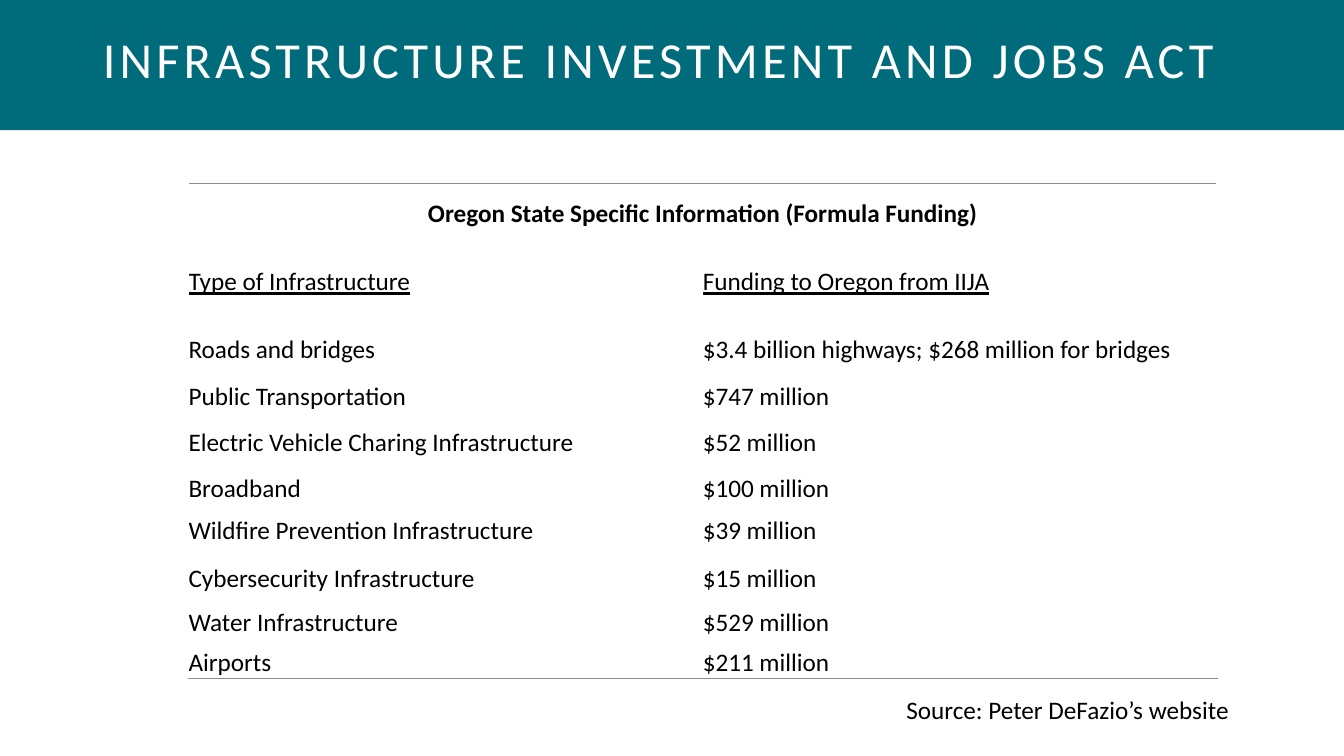
from lxml import etree
from pptx import Presentation
from pptx.dml.color import RGBColor
from pptx.enum.shapes import MSO_SHAPE
from pptx.enum.text import MSO_ANCHOR, MSO_AUTO_SIZE, PP_ALIGN
from pptx.oxml.ns import qn
from pptx.util import Inches, Pt

RECT = MSO_SHAPE.RECTANGLE
MIDDLE, FIXED = MSO_ANCHOR.MIDDLE, MSO_AUTO_SIZE.NONE
LEFT, CENTER = PP_ALIGN.LEFT, PP_ALIGN.CENTER
WIDE, HIGH = Inches(13.33), Inches(7.5)
TEAL, WHITE, BLACK, GRAY = "006C7B", "FFFFFF", "000000", "8C8C8C"
FONT = "Calibri"

HEADING = "Oregon State Specific Information (Formula Funding)"
ROWS = [
    (0.61, HEADING, ""),
    (0.74, "Type of Infrastructure", "Funding to Oregon from IIJA"),
    (0.61, "Roads and bridges",
     "$3.4 billion highways; $268 million for bridges"),
    (0.31, "Public Transportation", "$747 million"),
    (0.61, "Electric Vehicle Charing Infrastructure", "$52 million"),
    (0.31, "Broadband", "$100 million"),
    (0.52, "Wildfire Prevention Infrastructure", "$39 million"),
    (0.42, "Cybersecurity Infrastructure", "$15 million"),
    (0.47, "Water Infrastructure", "$529 million"),
    (0.31, "Airports", "$211 million"),
]


def color(code):
    return RGBColor.from_string(code)


def area(x, y, w, h):
    """Turn percentages of the slide's size into left, top, width, height."""
    return (int(WIDE * x / 100), int(HIGH * y / 100),
            int(WIDE * w / 100), int(HIGH * h / 100))


def style(para, size, code, align=LEFT, bold=False, under=False):
    para.alignment = align
    for run in para.runs:
        font = run.font
        font.name, font.size = FONT, Pt(size)
        font.bold, font.underline = bold, under
        font.color.rgb = color(code)


def add_title(slide, text):
    title = slide.shapes.title
    title.left, title.top, title.width, title.height = area(6.9, 3.47, 86.27, 9.6)
    frame = title.text_frame
    frame.text = text
    frame.auto_size, frame.vertical_anchor = FIXED, MIDDLE
    para = frame.paragraphs[0]
    para.line_spacing = 0.9
    style(para, 36, WHITE)
    para.runs[0].font._element.set("spc", "300")
    return title


def add_band(slide, title):
    """Draw the full-width band behind the title."""
    band = slide.shapes.add_shape(RECT, *area(0, 0, 100, 17.2))
    band.shadow.inherit = False
    band.fill.solid()
    band.fill.fore_color.rgb = color(TEAL)
    band.line.fill.background()
    title.element.addprevious(band.element)


def add_rule(cell, side):
    props = cell._tc.get_or_add_tcPr()
    line = etree.Element(qn(f"a:{side}"), w=str(Pt(0.75)))
    fill = etree.SubElement(line, qn("a:solidFill"))
    etree.SubElement(fill, qn("a:srgbClr"), val=GRAY)
    props.insert(0, line)


def fill_cell(cell, text, **look):
    cell.text = text
    cell.fill.background()
    cell.vertical_anchor = MIDDLE
    cell.margin_left = cell.margin_right = 0
    cell.margin_top = cell.margin_bottom = 0
    style(cell.text_frame.paragraphs[0], 18, BLACK, **look)


def add_grid(slide):
    spot = area(14.03, 24.27, 76.52, 65.5)
    table = slide.shapes.add_table(len(ROWS), 2, *spot).table
    table.first_row = table.horz_banding = False
    for i, (tall, *texts) in enumerate(ROWS):
        table.rows[i].height = Inches(tall)
        for j, text in enumerate(texts):
            look = {"under": i == 1}
            if i == 0:
                look = {"align": CENTER, "bold": True}
            fill_cell(table.cell(i, j), text, **look)
    for j in range(2):
        add_rule(table.cell(0, j), "lnT")
        add_rule(table.cell(len(ROWS) - 1, j), "lnB")
    table.cell(0, 0).merge(table.cell(0, 1))


def add_note(slide, text):
    frame = slide.shapes.add_textbox(*area(66.7, 91.2, 26.5, 5.33)).text_frame
    frame.word_wrap = True
    frame.text = text
    style(frame.paragraphs[0], 18, BLACK)


def main():
    deck = Presentation()
    deck.slide_width, deck.slide_height = WIDE, HIGH
    slide = deck.slides.add_slide(deck.slide_layouts.get_by_name("Title Only"))
    title = add_title(slide, "INFRASTRUCTURE INVESTMENT AND JOBS ACT")
    add_band(slide, title)
    add_grid(slide)
    add_note(slide, "Source: Peter DeFazio’s website")
    deck.save("out.pptx")


if __name__ == "__main__":
    main()
